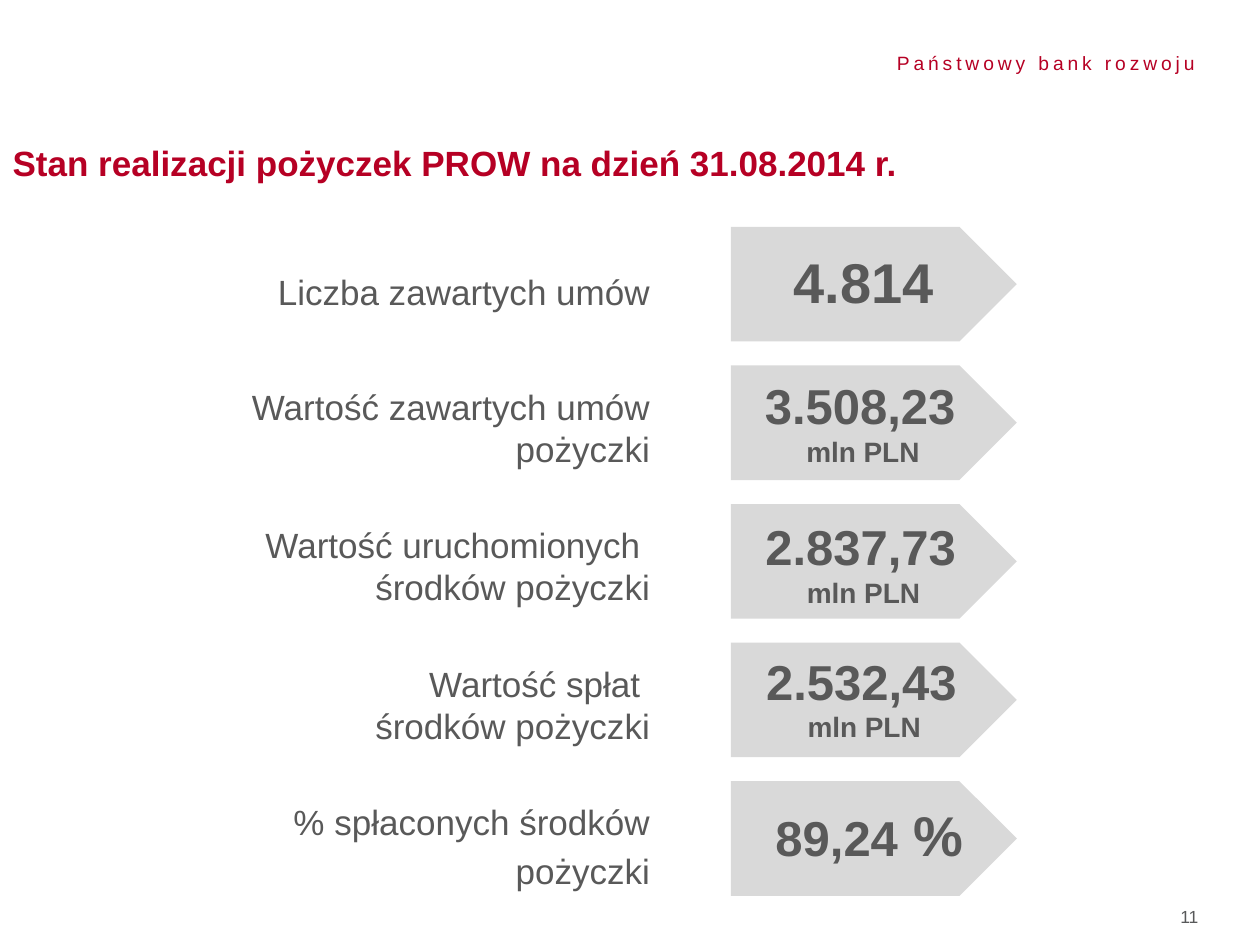
from dataclasses import dataclass

from pptx import Presentation
from pptx.dml.color import RGBColor
from pptx.enum.shapes import MSO_SHAPE as Shape
from pptx.enum.text import MSO_ANCHOR as Anchor, PP_ALIGN as Align
from pptx.util import Inches, Pt


@dataclass(frozen=True)
class Theme:
    font: str = "Arial"
    accent: RGBColor = RGBColor(0xB6, 0x00, 0x24)
    text: RGBColor = RGBColor(0x59, 0x59, 0x59)
    page: RGBColor = RGBColor(0x58, 0x59, 0x5A)
    arrow: RGBColor = RGBColor(0xD9, 0xD9, 0xD9)
    white: RGBColor = RGBColor(0xFF, 0xFF, 0xFF)
    body: int = 20
    value: int = 28
    large: int = 32
    unit: int = 16
    motto: int = 11
    number: int = 10


THEME = Theme()
ROW_PITCH = 1.1
LABEL_TOP = 1.78
ARROW_TOP = 1.8
ARROW_HEIGHT = 0.91

UNIT_LINE = ("mln PLN ", THEME.unit)
INDICATORS = [
    (["Liczba zawartych umów"], 1.15,
     [[("4.814", THEME.large)]], 0.9, (5.63, 1.81, 2.36)),
    (["Wartość zawartych umów", "pożyczki"], 1,
     [[("3.508,23 ", THEME.value)], [UNIT_LINE]], 1, (5.6, 2.89, 2.47)),
    (["Wartość uruchomionych ", "środków pożyczki"], 1,
     [[("2.837,73 ", THEME.value)], [UNIT_LINE]], 1, (5.61, 4.01, 2.46)),
    (["Wartość spłat ", "środków pożyczki"], 1,
     [[("2.532,43 ", THEME.value)], [UNIT_LINE]], 1, (5.71, 5.08, 2.27)),
    (["% spłaconych środków pożyczki"], 1.15,
     [[("89,24", THEME.value), (" %", THEME.large)]], 0.9, (5.63, 6.2, 2.45)),
]


def style(paragraph, size, color, bold=False, align=Align.LEFT):
    paragraph.alignment = align
    font = paragraph.font
    font.name, font.size, font.bold = THEME.font, Pt(size), bold
    font.color.rgb = color


def center_vertically(frame):
    frame.word_wrap = True
    frame.vertical_anchor = Anchor.MIDDLE
    frame.margin_left = Inches(0.14)
    frame.margin_top = frame.margin_right = frame.margin_bottom = Inches(0.05)


def add_text(slide, left, top, width, height):
    box = slide.shapes.add_textbox(
        Inches(left), Inches(top), Inches(width), Inches(height))
    box.text_frame.word_wrap = True
    return box.text_frame


def add_panel(slide, kind, left, top, width, height, fill):
    panel = slide.shapes.add_shape(
        kind, Inches(left), Inches(top), Inches(width), Inches(height))
    panel.shadow.inherit = False
    panel.fill.solid()
    panel.fill.fore_color.rgb = fill
    panel.line.fill.background()
    return panel


def add_title(slide, wording):
    title = slide.shapes.title
    title.left, title.top = Inches(0), Inches(1.07)
    title.width, title.height = Inches(9.21), Inches(0.48)
    frame = title.text_frame
    frame.text = wording
    frame.vertical_anchor = Anchor.TOP
    style(frame.paragraphs[0], THEME.body, THEME.accent, bold=True)


def add_motto(slide, wording):
    paragraph = add_text(slide, 7.02, 0.36, 3.23, 0.39).paragraphs[0]
    run = paragraph.add_run()
    run.text = wording
    run.font._element.set("spc", "220")
    style(paragraph, THEME.motto, THEME.accent)


def add_page_number(slide, number):
    paragraph = add_text(slide, 7.28, 7.14, 2.33, 0.28).paragraphs[0]
    paragraph.text = number
    style(paragraph, THEME.number, THEME.page, align=Align.RIGHT)


def add_label(slide, row, lines, spacing):
    top = LABEL_TOP + row * ROW_PITCH
    label = add_panel(slide, Shape.RECTANGLE, 1.61, top, 3.6, 1.02, THEME.white)
    center_vertically(label.text_frame)
    paragraph = label.text_frame.paragraphs[0]
    paragraph.text = "\v".join(lines)
    paragraph.line_spacing = spacing
    style(paragraph, THEME.body, THEME.text, align=Align.RIGHT)


def add_value(slide, lines, spacing, place):
    frame = add_text(slide, *place, ARROW_HEIGHT)
    center_vertically(frame)
    paragraph = frame.paragraphs[0]
    paragraph.line_spacing = spacing
    style(paragraph, THEME.value, THEME.text, bold=True, align=Align.CENTER)
    for index, line in enumerate(lines):
        if index:
            paragraph.add_line_break()
        for wording, size in line:
            run = paragraph.add_run()
            run.text = wording
            run.font.size = Pt(size)


def main():
    deck = Presentation()
    deck.slide_width, deck.slide_height = Inches(10), Inches(7.5)
    slide = deck.slides.add_slide(deck.slide_layouts[5])
    add_motto(slide, "Państwowy bank rozwoju")
    add_title(slide, "Stan realizacji pożyczek PROW na dzień 31.08.2014 r.")
    for row, (label, label_spacing, value, value_spacing, place) in enumerate(INDICATORS):
        add_label(slide, row, label, label_spacing)
        add_panel(slide, Shape.PENTAGON, 5.8, ARROW_TOP + row * ROW_PITCH,
                  2.27, ARROW_HEIGHT, THEME.arrow)
        add_value(slide, value, value_spacing, place)
    add_page_number(slide, "11")
    deck.save("out.pptx")


if __name__ == "__main__":
    main()
